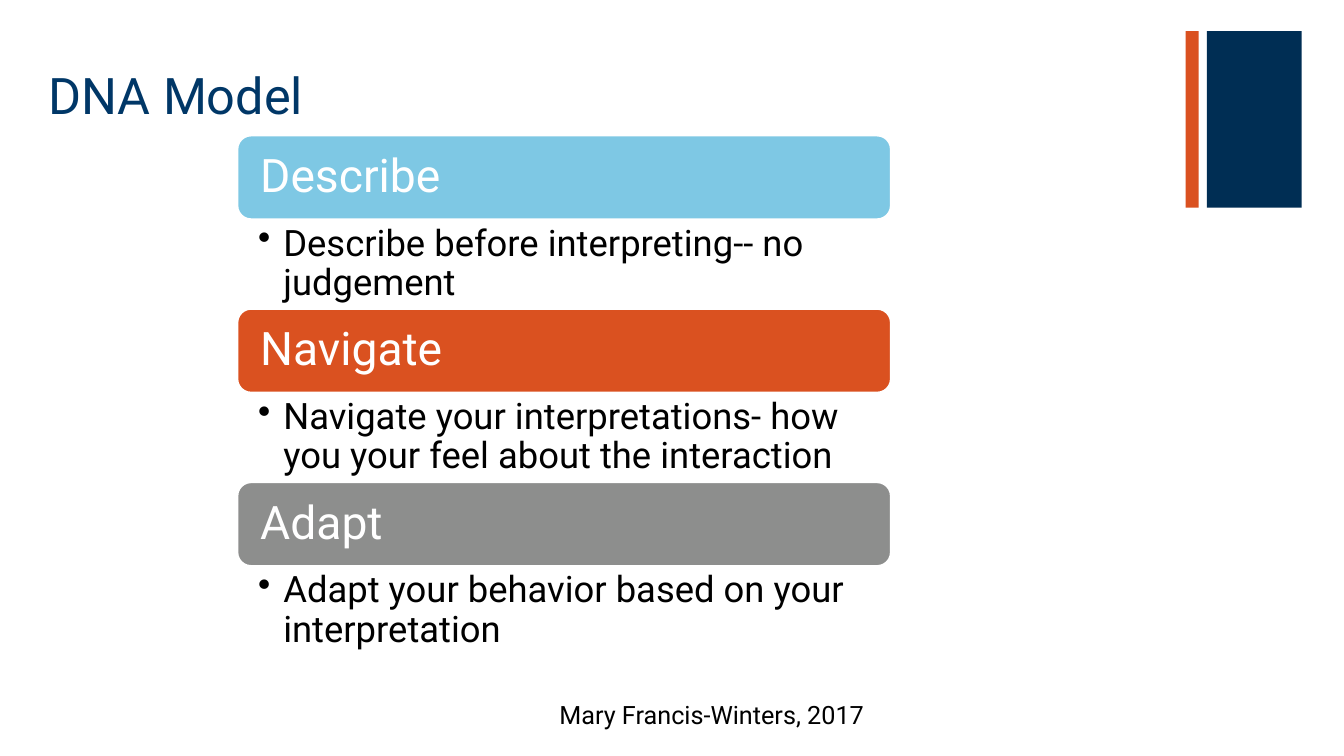
from lxml import etree
from pptx import Presentation
from pptx.dml.color import RGBColor
from pptx.enum.shapes import MSO_SHAPE
from pptx.enum.text import MSO_ANCHOR, PP_ALIGN
from pptx.oxml.ns import qn
from pptx.util import Inches, Pt

RECT, ROUNDED = MSO_SHAPE.RECTANGLE, MSO_SHAPE.ROUNDED_RECTANGLE
TOP, MIDDLE = MSO_ANCHOR.TOP, MSO_ANCHOR.MIDDLE
LEFT = PP_ALIGN.LEFT

WHITE = RGBColor(0xFF, 0xFF, 0xFF)
BLACK = RGBColor(0x00, 0x00, 0x00)
NAVY = RGBColor(0x00, 0x2E, 0x54)
TITLE_BLUE = RGBColor(0x00, 0x37, 0x67)
SKY = RGBColor(0x7E, 0xC8, 0xE4)
ORANGE = RGBColor(0xDA, 0x51, 0x20)
GRAY = RGBColor(0x8D, 0x8E, 0x8D)

STEPS = [
    ("Describe", SKY, "Describe before interpreting-- no judgement"),
    ("Navigate", ORANGE,
     "Navigate your interpretations- how you your feel about the interaction"),
    ("Adapt", GRAY, "Adapt your behavior based on your interpretation"),
]
STEP_LEFT, STEP_TOP, STEP_WIDTH = 2.35, 1.34, 6.49
BAR_HEIGHT, DETAIL_HEIGHT = 0.84, 0.88
STEP_PITCH = BAR_HEIGHT + DETAIL_HEIGHT


class SlideBuilder:
    """Draws styled elements on the current slide."""

    font = "Roboto"

    def __init__(self, slide):
        self.slide = slide

    def set_text(self, sp, text, size=18, color=BLACK, anchor=TOP,
                 insets=(0.1, 0.05, 0.1, 0.05), spacing=0.9, indent=0, bullet=None):
        tf = sp.text_frame
        tf.word_wrap = True
        tf.vertical_anchor = anchor
        tf.margin_left, tf.margin_top, tf.margin_right, tf.margin_bottom = map(Inches, insets)
        p = tf.paragraphs[0]
        p.alignment = LEFT
        p.line_spacing = spacing
        pPr = p._p.get_or_add_pPr()
        pPr.set("marL", str(Inches(indent)))
        pPr.set("indent", str(Inches(-indent if bullet else 0)))
        if bullet:
            etree.SubElement(pPr, qn("a:buChar")).set("char", bullet)
        r = p.add_run()
        r.text = text
        r.font.name = self.font
        r.font.size = Pt(size)
        r.font.color.rgb = color

    def text(self, box, text, **fmt):
        sp = self.slide.shapes.add_textbox(*map(Inches, box))
        self.set_text(sp, text, **fmt)

    def shape(self, kind, box, fill, line=None):
        sp = self.slide.shapes.add_shape(kind, *map(Inches, box))
        sp.shadow.inherit = False
        sp.fill.solid()
        sp.fill.fore_color.rgb = fill
        if line is None:
            sp.line.fill.background()
        else:
            sp.line.color.rgb = line
            sp.line.width = Pt(2)
        return sp

    def step(self, top, heading, fill, detail):
        bar = self.shape(ROUNDED, (STEP_LEFT, top, STEP_WIDTH, BAR_HEIGHT), fill, WHITE)
        self.set_text(bar, heading, size=33, color=WHITE, anchor=MIDDLE,
                      insets=(0.19, 0.14, 0.19, 0.14))
        self.text((STEP_LEFT, top + BAR_HEIGHT, STEP_WIDTH, DETAIL_HEIGHT), detail,
                  size=26, insets=(0.21, 0.05, 0.26, 0.05), indent=0.25, bullet="•")


def main():
    prs = Presentation()
    prs.slide_width, prs.slide_height = Inches(13.33), Inches(7.5)
    s = SlideBuilder(prs.slides.add_slide(prs.slide_layouts[6]))
    s.shape(RECT, (11.97, 0.31, 0.94, 1.75), NAVY)
    s.shape(RECT, (11.76, 0.31, 0.13, 1.75), ORANGE)
    s.text((0.38, 0.21, 8.62, 1.45), "DNA Model", size=36, color=TITLE_BLUE,
           anchor=MIDDLE, spacing=1.0)
    s.text((5.07, 6.92, 5.05, 0.37), "Mary Francis-Winters, 2017", indent=0.38)
    for i, step in enumerate(STEPS):
        s.step(STEP_TOP + i * STEP_PITCH, *step)
    prs.save("out.pptx")


if __name__ == "__main__":
    main()
